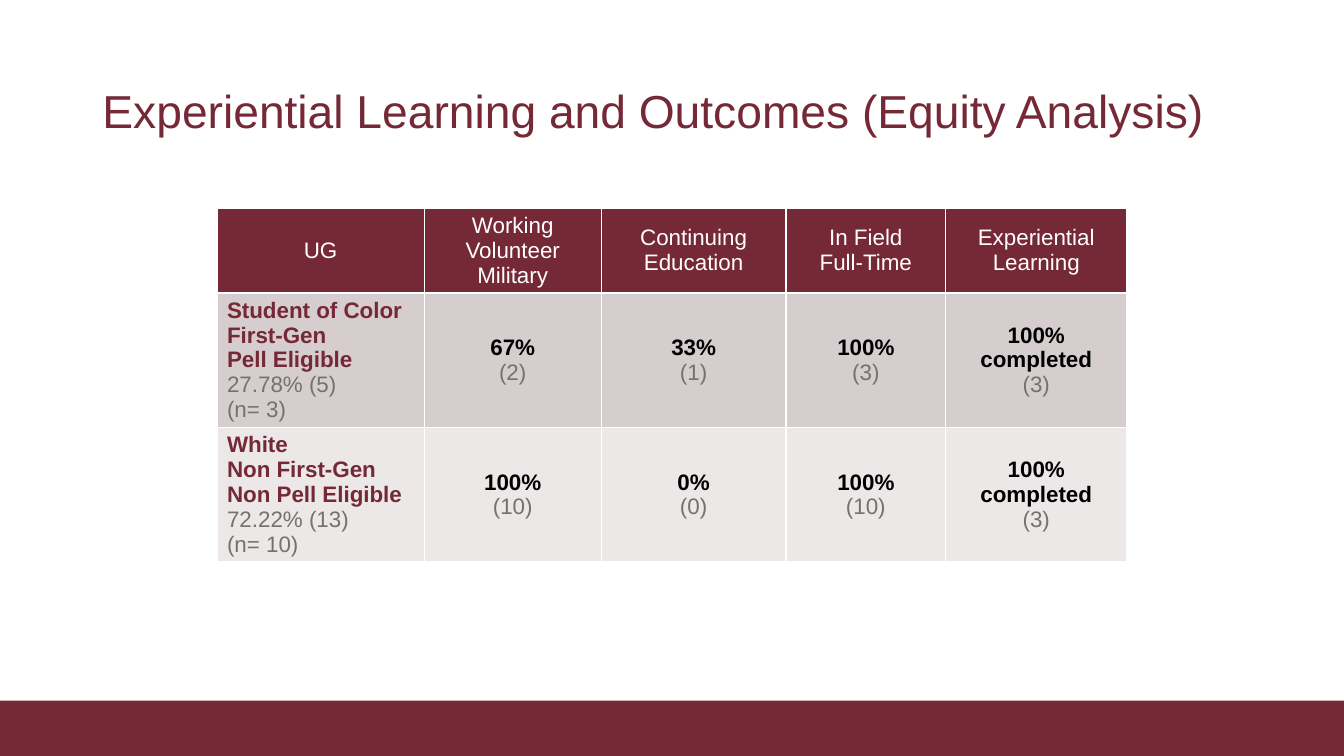
"""Build the experiential learning equity analysis slide."""
from dataclasses import dataclass

from lxml import etree
from pptx import Presentation
from pptx.dml.color import RGBColor
from pptx.enum.shapes import MSO_SHAPE
from pptx.enum.text import MSO_ANCHOR, PP_ALIGN
from pptx.oxml.ns import qn
from pptx.util import Pt

RECTANGLE = MSO_SHAPE.RECTANGLE
MIDDLE, TOP = MSO_ANCHOR.MIDDLE, MSO_ANCHOR.TOP
CENTER, LEFT = PP_ALIGN.CENTER, PP_ALIGN.LEFT


@dataclass(frozen=True)
class Theme:
    font: str = "Arial"
    title_size: int = 33
    table_size: int = 16
    maroon: str = "752836"
    white: str = "FFFFFF"
    black: str = "000000"
    gray: str = "767171"
    bands: tuple = ("D6CDCE", "ECE8E8")


THEME = Theme()


def style_font(font, size, color, bold=False):
    font.name = THEME.font
    font.size = Pt(size)
    font.bold = bold
    font.color.rgb = RGBColor.from_string(color)


def add_borders(cell):
    properties = cell._tc.get_or_add_tcPr()
    for side in ("a:lnL", "a:lnR", "a:lnT", "a:lnB"):
        line = etree.SubElement(properties, qn(side), w=str(Pt(1)))
        fill = etree.SubElement(line, qn("a:solidFill"))
        etree.SubElement(fill, qn("a:srgbClr"), val=THEME.white)


presentation = Presentation()
presentation.slide_width = Pt(960)
presentation.slide_height = Pt(540)
slide = presentation.slides.add_slide(presentation.slide_layouts[5])

footer = slide.shapes.add_shape(RECTANGLE, Pt(0), Pt(500.4), Pt(960), Pt(39.6))
footer.shadow.inherit = False
footer.fill.solid()
footer.fill.fore_color.rgb = RGBColor.from_string(THEME.maroon)
footer.line.fill.background()

title = slide.shapes.title
title.left, title.top, title.width, title.height = Pt(66), Pt(28.8), Pt(828), Pt(104.4)
title.text_frame.text = "Experiential Learning and Outcomes (Equity Analysis)"
title.text_frame.vertical_anchor = MIDDLE
title_paragraph = title.text_frame.paragraphs[0]
title_paragraph.alignment = LEFT
title_paragraph.line_spacing = 0.9
style_font(title_paragraph.runs[0].font, THEME.title_size, THEME.maroon)

table_rows = [
    ["UG", "Working\nVolunteer\nMilitary", "Continuing\nEducation",
     "In Field\nFull-Time", "Experiential\nLearning"],
    ["Student of Color\nFirst-Gen\nPell Eligible\n27.78% (5)\n(n= 3)",
     "67%\n(2)", "33%\n(1)", "100%\n(3)", "100% completed\n(3)"],
    ["White\nNon First-Gen\nNon Pell Eligible\n72.22% (13)\n(n= 10)",
     "100%\n(10)", "0%\n(0)", "100%\n(10)", "100% completed\n(3)"],
]
column_widths = [148, 126.5, 132, 114, 129.5]
row_heights = [59.5, 96, 96]

table = slide.shapes.add_table(
    len(row_heights), len(column_widths), Pt(155), Pt(148.7),
    Pt(sum(column_widths)), Pt(sum(row_heights))).table
for column, width in zip(table.columns, column_widths):
    column.width = Pt(width)
for row, height in zip(table.rows, row_heights):
    row.height = Pt(height)

row_fills = (THEME.maroon, *THEME.bands)
for row_index, texts in enumerate(table_rows):
    for column_index, text in enumerate(texts):
        is_header = row_index == 0
        is_group = not is_header and column_index == 0
        bold_lines = 0 if is_header else 3 if is_group else 1
        bold_color = THEME.maroon if is_group else THEME.black
        plain_color = THEME.white if is_header else THEME.gray

        cell = table.cell(row_index, column_index)
        add_borders(cell)
        cell.fill.solid()
        cell.fill.fore_color.rgb = RGBColor.from_string(row_fills[row_index])
        cell.vertical_anchor = TOP if is_group else MIDDLE
        cell.text_frame.text = text
        for line_index, paragraph in enumerate(cell.text_frame.paragraphs):
            bold = line_index < bold_lines
            paragraph.alignment = LEFT if is_group else CENTER
            style_font(paragraph.runs[0].font, THEME.table_size,
                       bold_color if bold else plain_color, bold)

presentation.save("out.pptx")
